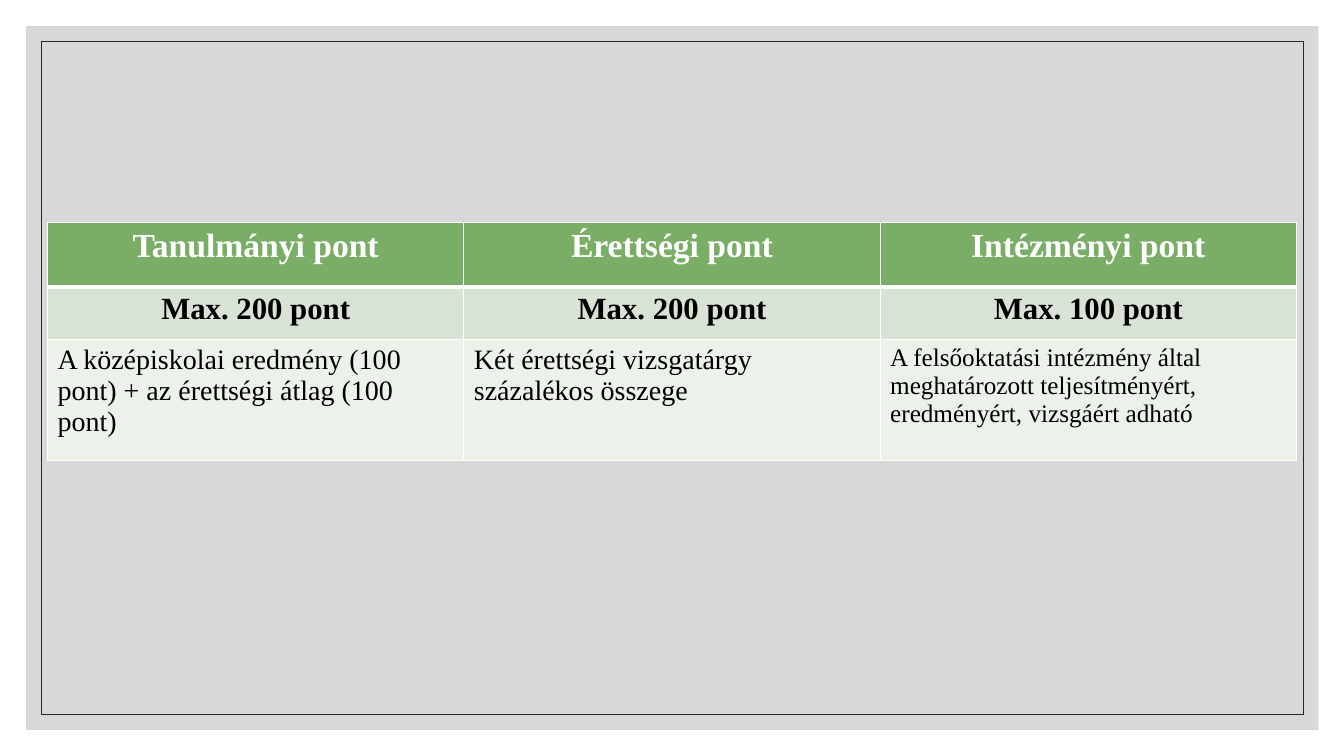
from dataclasses import dataclass

from lxml import etree
from pptx import Presentation
from pptx.dml.color import RGBColor
from pptx.enum.shapes import MSO_SHAPE
from pptx.enum.text import PP_ALIGN
from pptx.oxml.ns import qn
from pptx.util import Pt

RECT = MSO_SHAPE.RECTANGLE
LEFT, CENTER = PP_ALIGN.LEFT, PP_ALIGN.CENTER
FONT = "Times New Roman"
WIDE, HIGH = 960, 540
COLORS = {
    "panel": "BFBFBF",
    "frame": "262626",
    "white": "FFFFFF",
    "black": "000000",
    "head": "7AAE66",
    "band": "D7E3D3",
    "body": "ECF2EA",
}


@dataclass
class Row:
    texts: tuple[str, ...]
    sizes: tuple[int, ...]
    height: float
    fill: str
    ink: str
    bold: bool
    align: PP_ALIGN
    top: float = 1
    base: float = 1


ROWS = [
    Row(("Tanulmányi pont", "Érettségi pont", "Intézményi pont"),
        (24, 24, 24), 46.3, "head", "white", True, CENTER, base=3),
    Row(("Max. 200 pont", "Max. 200 pont", "Max. 100 pont"),
        (22, 22, 22), 37.2, "band", "black", True, CENTER, top=3),
    Row(("A középiskolai eredmény (100 pont) + az érettségi átlag (100 pont)",
         "Két érettségi vizsgatárgy százalékos összege",
         "A felsőoktatási intézmény által meghatározott teljesítményért, "
         "eredményért, vizsgáért adható"),
        (20, 20, 18), 86.4, "body", "black", False, LEFT),
]


def color(name: str) -> RGBColor:
    return RGBColor.from_string(COLORS[name])


def add_rect(slide, inset: float, width: float, height: float):
    rect = slide.shapes.add_shape(RECT, Pt(inset), Pt(inset), Pt(width), Pt(height))
    rect.shadow.inherit = False
    return rect


def set_edge(cell, side: str, width: float) -> None:
    props = cell._tc.get_or_add_tcPr()
    line = etree.SubElement(props, qn(f"a:ln{side}"), w=str(Pt(width)))
    solid = etree.SubElement(line, qn("a:solidFill"))
    etree.SubElement(solid, qn("a:srgbClr"), val=COLORS["white"])


def fill_cell(cell, text: str, size: int, row: Row) -> None:
    # Borders come before the fill in the cell properties
    for side, width in {"L": 1, "R": 1, "T": row.top, "B": row.base}.items():
        set_edge(cell, side, width)
    cell.fill.solid()
    cell.fill.fore_color.rgb = color(row.fill)
    para = cell.text_frame.paragraphs[0]
    para.alignment = row.align
    run = para.add_run()
    run.text = text
    style = {"name": FONT, "size": Pt(size), "bold": row.bold}
    for key, value in style.items():
        setattr(run.font, key, value)
    run.font.color.rgb = color(row.ink)


def add_grid(slide, left: float, top: float, width: float) -> None:
    count = len(ROWS[0].texts)
    height = sum(row.height for row in ROWS)
    table = slide.shapes.add_table(
        len(ROWS), count, Pt(left), Pt(top), Pt(width), Pt(height)).table
    for column in table.columns:
        column.width = Pt(width / count)
    for index, row in enumerate(ROWS):
        table.rows[index].height = Pt(row.height)
        for place, (text, size) in enumerate(zip(row.texts, row.sizes)):
            fill_cell(table.cell(index, place), text, size, row)


def main() -> None:
    deck = Presentation()
    deck.slide_width, deck.slide_height = Pt(WIDE), Pt(HIGH)
    slide = deck.slides.add_slide(deck.slide_layouts[6])

    # Translucent panel
    panel = add_rect(slide, 18.7, 923, 502.6)
    panel.fill.solid()
    panel.fill.fore_color.rgb = color("panel")
    tint = panel.fill._xPr.find(qn("a:solidFill"))[0]
    etree.SubElement(tint, qn("a:alpha"), val="60000")
    panel.line.fill.background()

    # Thin frame
    frame = add_rect(slide, 29.5, 901.4, 481)
    frame.fill.background()
    frame.line.color.rgb = color("frame")
    frame.line.width = Pt(0.5)

    # Table of points
    add_grid(slide, 33.9, 158.9, 892.2)

    deck.save("out.pptx")


if __name__ == "__main__":
    main()
